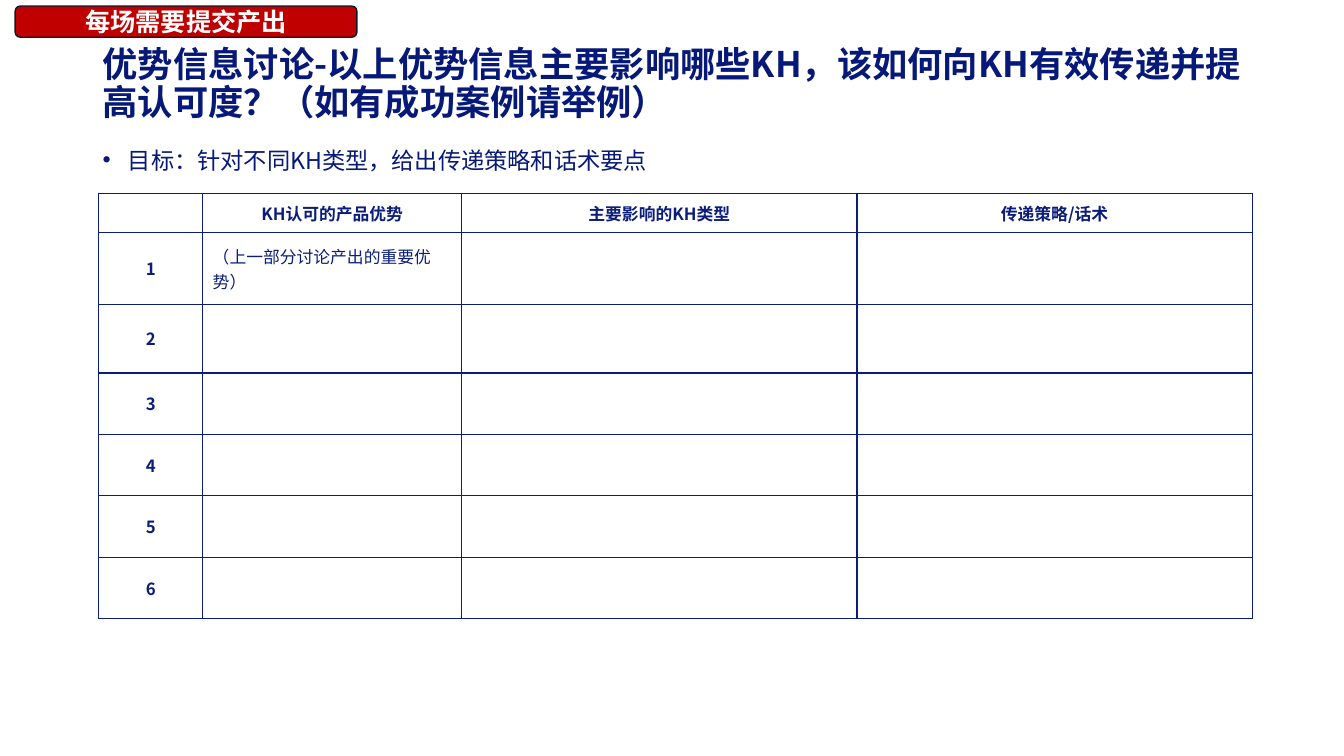
import pptx
import pptx.dml.color
import pptx.enum.shapes
import pptx.enum.text
import pptx.oxml
import pptx.oxml.ns
import pptx.util

Inches, Pt = pptx.util.Inches, pptx.util.Pt
ALIGN, ANCHOR = pptx.enum.text.PP_ALIGN, pptx.enum.text.MSO_ANCHOR
FONT = "Noto Sans CJK SC"
NAVY, GRID, RED, OUTLINE, WHITE = "071978", "0B1D7A", "C00000", "0E192C", "FFFFFF"

TITLE = "优势信息讨论-以上优势信息主要影响哪些KH，该如何向KH有效传递并提高认可度？（如有成功案例请举例）"
GOAL = "目标：针对不同KH类型，给出传递策略和话术要点"
BADGE = "每场需要提交产出"
HEADERS = ["", "KH认可的产品优势", "主要影响的KH类型", "传递策略/话术"]
ADVANTAGES = ["（上一部分讨论产出的重要优势）", "", "", "", "", ""]
COLUMN_WIDTHS = [1.03, 2.57, 3.92, 3.92]
ROW_HEIGHTS = [0.39, 0.71, 0.68] + [0.61] * 4


def color(value):
    return pptx.dml.color.RGBColor.from_string(value)


def element(tag, **attributes):
    node = pptx.oxml.parse_xml(f"<a:{tag} {pptx.oxml.ns.nsdecls('a')}/>")
    for key, value in attributes.items():
        node.set(key, value)
    return node


def write(frame, text, size, ink, bold=False, align=ALIGN.LEFT):
    paragraph = frame.paragraphs[0]
    paragraph.text = text
    paragraph.alignment = align
    font = paragraph.font
    font.size, font.bold, font.name = Pt(size), bold, FONT
    font.color.rgb = color(ink)
    font._element.find(pptx.oxml.ns.qn("a:latin")).addnext(element("ea", typeface=FONT))
    return paragraph


def add_text(slide, left, top, width, height):
    frame = slide.shapes.add_textbox(*map(Inches, (left, top, width, height))).text_frame
    frame.word_wrap = True
    frame.vertical_anchor = ANCHOR.MIDDLE
    return frame


def add_borders(cell):
    properties = cell._tc.get_or_add_tcPr()
    for position, side in enumerate(("lnL", "lnR", "lnT", "lnB")):
        border = element(side, w=str(Pt(1)))
        fill = element("solidFill")
        fill.append(element("srgbClr", val=GRID))
        border.append(fill)
        properties.insert(position, border)


def add_discussion_table(slide):
    rows = [HEADERS] + [[str(n), text, "", ""] for n, text in enumerate(ADVANTAGES, 1)]
    table = slide.shapes.add_table(
        len(rows), len(HEADERS), Inches(0.98), Inches(1.92),
        Inches(sum(COLUMN_WIDTHS)), Inches(sum(ROW_HEIGHTS))).table
    for column, width in zip(table.columns, COLUMN_WIDTHS):
        column.width = Inches(width)
    for r, (row, height) in enumerate(zip(rows, ROW_HEIGHTS)):
        table.rows[r].height = Inches(height)
        for c, text in enumerate(row):
            cell = table.cell(r, c)
            heading = r == 0 or c == 0
            write(cell.text_frame, text, 12, GRID, heading, ALIGN.CENTER if heading else ALIGN.LEFT)
            if not text:
                cell.text_frame.paragraphs[0]._p.append(element("endParaRPr", sz="1200"))
            cell.vertical_anchor = ANCHOR.MIDDLE
            cell.fill.solid()
            cell.fill.fore_color.rgb = color(WHITE)
            add_borders(cell)


def add_badge(slide):
    badge = slide.shapes.add_shape(
        pptx.enum.shapes.MSO_SHAPE.ROUNDED_RECTANGLE, *map(Inches, (0.15, 0.06, 3.39, 0.31)))
    badge.shadow.inherit = False
    badge.fill.solid()
    badge.fill.fore_color.rgb = color(RED)
    badge.line.color.rgb = color(OUTLINE)
    badge.line.width = Pt(1)
    badge.text_frame.vertical_anchor = ANCHOR.MIDDLE
    write(badge.text_frame, BADGE, 18, WHITE, True, ALIGN.CENTER)


def main():
    deck = pptx.Presentation()
    deck.slide_width, deck.slide_height = Inches(13.33), Inches(7.5)
    slide = deck.slides.add_slide(deck.slide_layouts[6])

    title = write(add_text(slide, 0.92, 0.4, 11.5, 0.88), TITLE, 25.2, NAVY, True)
    title.line_spacing = 0.9

    goal_frame = add_text(slide, 0.92, 1.46, 11.5, 0.32)
    goal_properties = goal_frame.paragraphs[0]._p.get_or_add_pPr()
    goal_properties.set("marL", str(Inches(0.25)))
    goal_properties.set("indent", str(-Inches(0.25)))
    goal_properties.append(element("buFont", typeface="Arial"))
    goal_properties.append(element("buChar", char="•"))
    goal = write(goal_frame, GOAL, 16.6, NAVY)
    goal.line_spacing = 0.7

    add_discussion_table(slide)
    add_badge(slide)
    deck.save("out.pptx")


if __name__ == "__main__":
    main()
